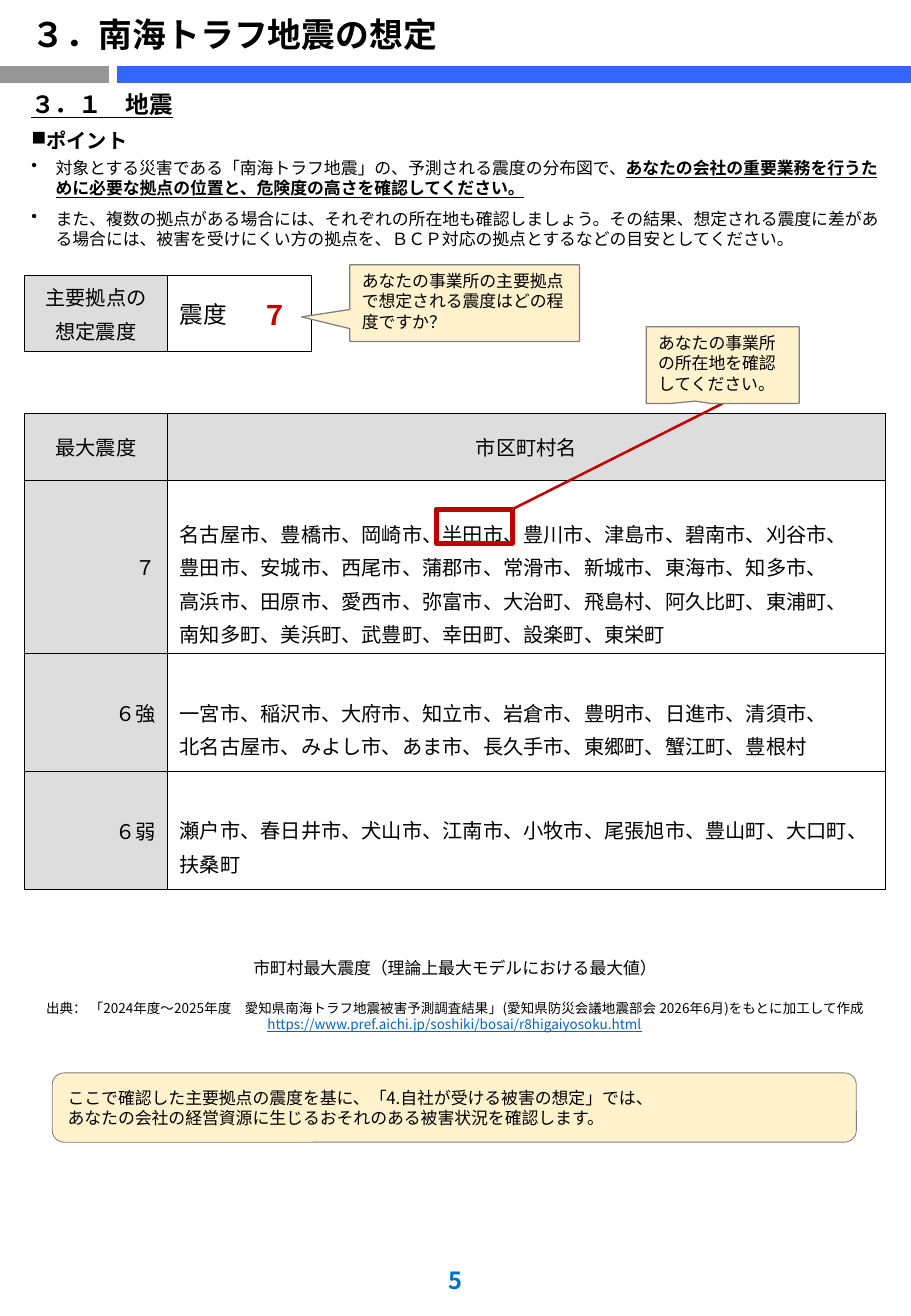
from dataclasses import dataclass
from typing import Optional

from lxml.etree import SubElement
from pptx import Presentation
from pptx.dml.color import RGBColor
from pptx.enum.shapes import MSO_CONNECTOR, MSO_SHAPE
from pptx.enum.text import MSO_ANCHOR, PP_ALIGN
from pptx.oxml.ns import qn
from pptx.util import Inches, Pt

FONT = "Noto Sans CJK JP"
COLORS = {
    "text": "000000", "gray": "969696", "blue": "3366FF", "header": "DDDDDD",
    "red": "C00000", "cream": "FFF2CC", "outline": "808080",
    "link": "0563C1", "page": "0070C0",
}


@dataclass
class Line:
    """One paragraph; emphasis is a bold underlined run after the text."""
    text: str
    size: float = 10
    bold: bool = False
    underline: bool = False
    color: str = "text"
    align: PP_ALIGN = PP_ALIGN.LEFT
    before: float = 0
    after: float = 0
    bullet: str = ""
    indent: float = 0
    emphasis: str = ""


@dataclass
class Box:
    left: float
    top: float
    width: float
    height: float

    def lengths(self) -> list:
        return [Inches(v) for v in (self.left, self.top, self.width, self.height)]


@dataclass
class Cell:
    lines: list
    fill: Optional[str] = None
    sides: str = "LRTB"
    top_margin: float = 0.05


@dataclass
class Callout:
    box: Box
    shape: MSO_SHAPE
    adjustments: tuple
    text: str
    outline: float = 0.75
    anchor: MSO_ANCHOR = MSO_ANCHOR.TOP


def rgb(name: str) -> RGBColor:
    return RGBColor.from_string(COLORS[name])


def write(frame, lines: list, anchor=MSO_ANCHOR.TOP) -> None:
    frame.word_wrap = True
    frame.vertical_anchor = anchor
    for number, line in enumerate(lines):
        paragraph = frame.paragraphs[0] if number == 0 else frame.add_paragraph()
        paragraph.text = line.text
        paragraph.alignment = line.align
        paragraph.space_before = Pt(line.before if number else 0)
        paragraph.space_after = Pt(line.after)
        if line.bullet:
            properties = paragraph._p.get_or_add_pPr()
            properties.set("marL", str(Inches(line.indent)))
            properties.set("indent", str(-Inches(line.indent)))
            SubElement(properties, qn("a:buChar")).set("char", line.bullet)
        font = paragraph.font
        font.name, font.size = FONT, Pt(line.size)
        font.color.rgb = rgb(line.color)
        if line.emphasis:
            run = paragraph.add_run()
            run.text = line.emphasis
            run.font.bold = run.font.underline = True
        else:
            font.bold, font.underline = line.bold, line.underline
        latin = paragraph._p.pPr.find(".//" + qn("a:latin"))
        east_asian = SubElement(latin.getparent(), qn("a:ea"))
        east_asian.set("typeface", FONT)
        latin.addnext(east_asian)


def add_text(slide, box: Box, lines: list, anchor=MSO_ANCHOR.TOP) -> None:
    write(slide.shapes.add_textbox(*box.lengths()).text_frame, lines, anchor)


def add_line(slide, start: tuple, end: tuple, color: str, width: float):
    points = [Inches(v) for v in (*start, *end)]
    connector = slide.shapes.add_connector(MSO_CONNECTOR.STRAIGHT, *points)
    connector.line.color.rgb = rgb(color)
    connector.line.width = Pt(width)
    SubElement(connector._element.spPr, qn("a:effectLst"))
    return connector


def add_callout(slide, callout: Callout):
    shape = slide.shapes.add_shape(callout.shape, *callout.box.lengths())
    shape.shadow.inherit = False
    for index, value in enumerate(callout.adjustments):
        shape.adjustments[index] = value
    shape.fill.solid()
    shape.fill.fore_color.rgb = rgb("cream")
    shape.line.color.rgb = rgb("outline")
    shape.line.width = Pt(callout.outline)
    write(shape.text_frame, [Line(callout.text)], callout.anchor)
    return shape


def set_borders(cell, sides: str) -> None:
    properties = cell._tc.get_or_add_tcPr()
    for position, side in enumerate("LRTB"):
        border = properties.makeelement(qn(f"a:ln{side}"), {"w": str(Pt(0.5))})
        if side in sides:
            fill = SubElement(border, qn("a:solidFill"))
            SubElement(fill, qn("a:srgbClr")).set("val", COLORS["text"])
        else:
            SubElement(border, qn("a:noFill"))
        properties.insert(position, border)


def add_grid(slide, left: float, top: float, widths: list, heights: list, rows: list) -> None:
    box = Box(left, top, sum(widths), sum(heights))
    table = slide.shapes.add_table(len(heights), len(widths), *box.lengths()).table
    table.first_row = table.horz_banding = False
    for column, width in zip(table.columns, widths):
        column.width = Inches(width)
    for row, height in zip(table.rows, heights):
        row.height = Inches(height)
    for row, contents in zip(table.rows, rows):
        for cell, content in zip(row.cells, contents):
            write(cell.text_frame, content.lines)
            cell.vertical_anchor = MSO_ANCHOR.MIDDLE
            cell.margin_top = Inches(content.top_margin)
            if content.fill:
                cell.fill.solid()
                cell.fill.fore_color.rgb = rgb(content.fill)
            else:
                cell.fill.background()
            set_borders(cell, content.sides)


def cell_lines(*texts: str, align=PP_ALIGN.CENTER) -> list:
    return [Line(text, 12, align=align, before=2.4) for text in texts]


CITIES = {
    "７": ("名古屋市、豊橋市、岡崎市、半田市、豊川市、津島市、碧南市、刈谷市、",
          "豊田市、安城市、西尾市、蒲郡市、常滑市、新城市、東海市、知多市、",
          "高浜市、田原市、愛西市、弥富市、大治町、飛島村、阿久比町、東浦町、",
          "南知多町、美浜町、武豊町、幸田町、設楽町、東栄町"),
    "６強": ("一宮市、稲沢市、大府市、知立市、岩倉市、豊明市、日進市、清須市、",
           "北名古屋市、みよし市、あま市、長久手市、東郷町、蟹江町、豊根村"),
    "６弱": ("瀬戸市、春日井市、犬山市、江南市、小牧市、尾張旭市、豊山町、大口町、", "扶桑町"),
}
POINTS = [
    Line("３．１　地震", 14, bold=True, underline=True, after=6),
    Line("ポイント", 12, bold=True, after=3, bullet="■"),
    Line("対象とする災害である「南海トラフ地震」の、予測される震度の分布図で、", after=6, bullet="•", indent=0.2,
         emphasis="あなたの会社の重要業務を行うために必要な拠点の位置と、危険度の高さを確認してください。"),
    Line("また、複数の拠点がある場合には、それぞれの所在地も確認しましょう。その結果、想定される震度に差がある場合には、"
         "被害を受けにくい方の拠点を、ＢＣＰ対応の拠点とするなどの目安としてください。", bullet="•", indent=0.2),
]
SOURCE = [
    Line("市町村最大震度（理論上最大モデルにおける最大値）", align=PP_ALIGN.CENTER, after=13),
    Line("出典： 「2024年度～2025年度　愛知県南海トラフ地震被害予測調査結果」(愛知県防災会議地震部会 2026年6月)をもとに加工して作成",
         8, align=PP_ALIGN.CENTER),
    Line("https://www.pref.aichi.jp/soshiki/bosai/r8higaiyosoku.html", 8,
         underline=True, color="link", align=PP_ALIGN.CENTER),
]
LOCATION = Callout(Box(5.32, 2.69, 1.26, 0.63), MSO_SHAPE.RECTANGULAR_CALLOUT, (-0.18, 0.47),
                   "あなたの事業所の所在地を確認してください。")
INTENSITY = Callout(Box(2.88, 2.18, 1.89, 0.63), MSO_SHAPE.RECTANGULAR_CALLOUT, (-0.71, 0.18),
                    "あなたの事業所の主要拠点で想定される震度はどの程度ですか？")
NEXT_STEP = Callout(Box(0.43, 8.83, 6.62, 0.57), MSO_SHAPE.ROUNDED_RECTANGLE, (0.17,),
                    "ここで確認した主要拠点の震度を基に、「4.自社が受ける被害の想定」では、\v"
                    "あなたの会社の経営資源に生じるおそれのある被害状況を確認します。",
                    0.5, MSO_ANCHOR.MIDDLE)


def main() -> None:
    presentation = Presentation()
    presentation.slide_width, presentation.slide_height = Inches(7.5), Inches(10.83)
    slide = presentation.slides.add_slide(presentation.slide_layouts[6])

    add_line(slide, (0, 0.61), (0.9, 0.61), "gray", 10)
    add_line(slide, (0.96, 0.61), (7.5, 0.61), "blue", 10)
    add_text(slide, Box(0.16, 0.04, 7.17, 0.46),
             [Line("３．南海トラフ地震の想定", 20, bold=True)], MSO_ANCHOR.BOTTOM)
    add_text(slide, Box(0.16, 0.69, 7.17, 1.42), POINTS)
    add_text(slide, Box(0.2, 7.83, 7.09, 0.73), SOURCE)

    city_rows = [[Cell(cell_lines(text), "header") for text in ("最大震度", "市区町村名")]]
    for level, cities in CITIES.items():
        city_rows.append([Cell(cell_lines(level, align=PP_ALIGN.RIGHT), "header"),
                          Cell(cell_lines(*cities, align=PP_ALIGN.LEFT), top_margin=0.32)])
    add_grid(slide, 0.2, 3.4, [1.18, 5.91], [0.55, 1.43, 0.97, 0.97], city_rows)
    add_grid(slide, 0.2, 2.27, [1.18, 0.59, 0.59], [0.62], [[
        Cell(cell_lines("主要拠点の", "想定震度"), "header"),
        Cell([Line("震度", 14, align=PP_ALIGN.CENTER)], sides="LTB"),
        Cell([Line("７", 16, bold=True, color="red", align=PP_ALIGN.CENTER)], sides="RTB"),
    ]])

    pointer = add_line(slide, (4.22, 4.19), (5.95, 3.32), "red", 1.5)
    city_frame = slide.shapes.add_shape(MSO_SHAPE.RECTANGLE, *Box(3.59, 4.19, 0.63, 0.28).lengths())
    city_frame.shadow.inherit = False
    city_frame.fill.background()
    city_frame.line.color.rgb = rgb("red")
    city_frame.line.width = Pt(3)
    pointer.end_connect(add_callout(slide, LOCATION), 2)
    add_callout(slide, INTENSITY)
    add_callout(slide, NEXT_STEP)
    add_text(slide, Box(0, 10.3, 7.5, 0.4),
             [Line("5", 14, bold=True, color="page", align=PP_ALIGN.CENTER)], MSO_ANCHOR.BOTTOM)
    presentation.save("out.pptx")


if __name__ == "__main__":
    main()
